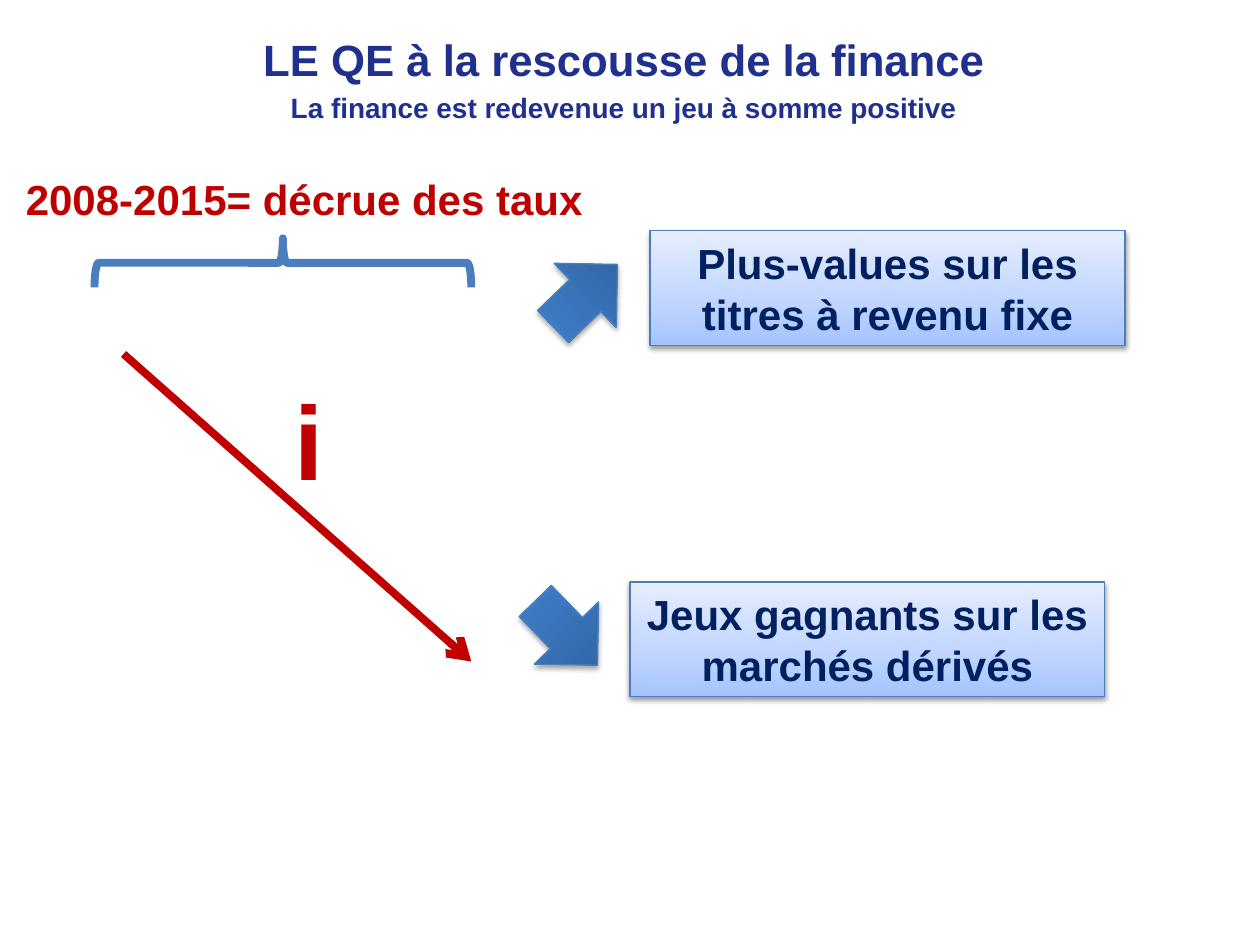
from lxml import etree
from pptx import Presentation
from pptx import util as u
from pptx.dml.color import RGBColor
from pptx.enum import shapes, text
from pptx.oxml.ns import qn

HUES = {"title": "1F308E", "red": "C00000", "navy": "002060", "line": "4B7EBC"}
HEAD = [("LE QE à la rescousse de la finance", 25),
        ("La finance est redevenue un jeu à somme positive", 16)]
NOTES = [("2008-2015= décrue des taux", (5, 95.8, 337.7, 36), 24, "CENTER"),
         ("i", (161.3, 211, 85, 80), 60, "LEFT")]
ARROWS = [((308.9, 143.3), 226), ((298.1, 336.2), 315.9)]
BOXES = [("Plus-values sur les titres à revenu fixe", (371.5, 131.8)),
         ("Jeux gagnants sur les marchés dérivés", (360, 332.6))]
ARROW = {"stops": [(0, "2F5F99"), (80, "3D7CC7"), (100, "3A7CCB")],
         "alpha": 35, "dist": 1.8}
BOX = {"stops": [(0, "A4C4FF"), (35, "BFD4FF"), (100, "E6EEFF")],
       "alpha": 38, "dist": 1.6}
FRAME = {"word_wrap": True, "auto_size": text.MSO_AUTO_SIZE.NONE}

deck = Presentation()
deck.slide_width, deck.slide_height = u.Pt(720), u.Pt(540)
slide = deck.slides.add_slide(deck.slide_layouts[6])


def pts(vals):
    return [u.Pt(v) for v in vals]


def node(up, tag, **attrs):
    return etree.SubElement(up, qn("a:" + tag), attrs)


def write(shape, lines, hue, align="CENTER", gap=0, anchor="TOP"):
    frame = shape.text_frame
    for key, val in FRAME.items():
        setattr(frame, key, val)
    frame.vertical_anchor = text.MSO_ANCHOR[anchor]
    for i, (words, size) in enumerate(lines):
        para = frame.add_paragraph() if i else frame.paragraphs[0]
        para.alignment = text.PP_ALIGN[align]
        para.space_before = u.Pt(gap)
        run = para.add_run()
        run.text = words
        look = {"name": "Arial", "size": u.Pt(size), "bold": True}
        for key, val in look.items():
            setattr(run.font, key, val)
        run.font.color.rgb = RGBColor.from_string(HUES[hue])


def stroke(shape, hue, width):
    shape.line.color.rgb = RGBColor.from_string(HUES[hue])
    shape.line.width = u.Pt(width)


def draw(kind, place, width, turn=0):
    shape = slide.shapes.add_shape(shapes.MSO_SHAPE[kind], *pts(place))
    shape.rotation = turn
    shape.shadow.inherit = False
    stroke(shape, "line", width)
    return shape


def shade(shape, style):
    shape.fill.gradient()
    shape.fill.gradient_angle = 90
    props = shape._element.spPr
    stops = props.find(".//" + qn("a:gsLst"))
    for old in list(stops):
        stops.remove(old)
    for pos, hue in style["stops"]:
        node(node(stops, "gs", pos=str(pos * 1000)), "srgbClr", val=hue)
    cast = node(props.find(qn("a:effectLst")), "outerShdw",
                blurRad=str(u.Pt(3.1)), dist=str(u.Pt(style["dist"])),
                dir="5400000", rotWithShape="0")
    tint = node(cast, "srgbClr", val="000000")
    node(tint, "alpha", val=str(style["alpha"] * 1000))


title = slide.shapes.add_textbox(*pts((25.2, 15.1, 662.4, 28)))
write(title, HEAD, "title", gap=3)

brace = draw("RIGHT_BRACE", (147.6, 42.5, 28.1, 215.3), 4.5, 270)
brace.fill.background()

fall = slide.shapes.add_connector(shapes.MSO_CONNECTOR.STRAIGHT,
                                  *pts((70.6, 202.3, 269.3, 378)))
stroke(fall, "red", 4.5)
node(fall.line._get_or_add_ln(), "tailEnd", type="arrow")
node(fall._element.spPr, "effectLst")

for spot, turn in ARROWS:
    shade(draw("DOWN_ARROW", (*spot, 51.1, 51.1), 0.75, turn), ARROW)

for words, spot in BOXES:
    box = draw("RECTANGLE", (*spot, 271.4, 65.5), 0.75)
    shade(box, BOX)
    write(box, [(words, 24)], "navy", anchor="MIDDLE")

for words, place, size, align in NOTES:
    write(slide.shapes.add_textbox(*pts(place)), [(words, size)], "red", align)

deck.save("out.pptx")
